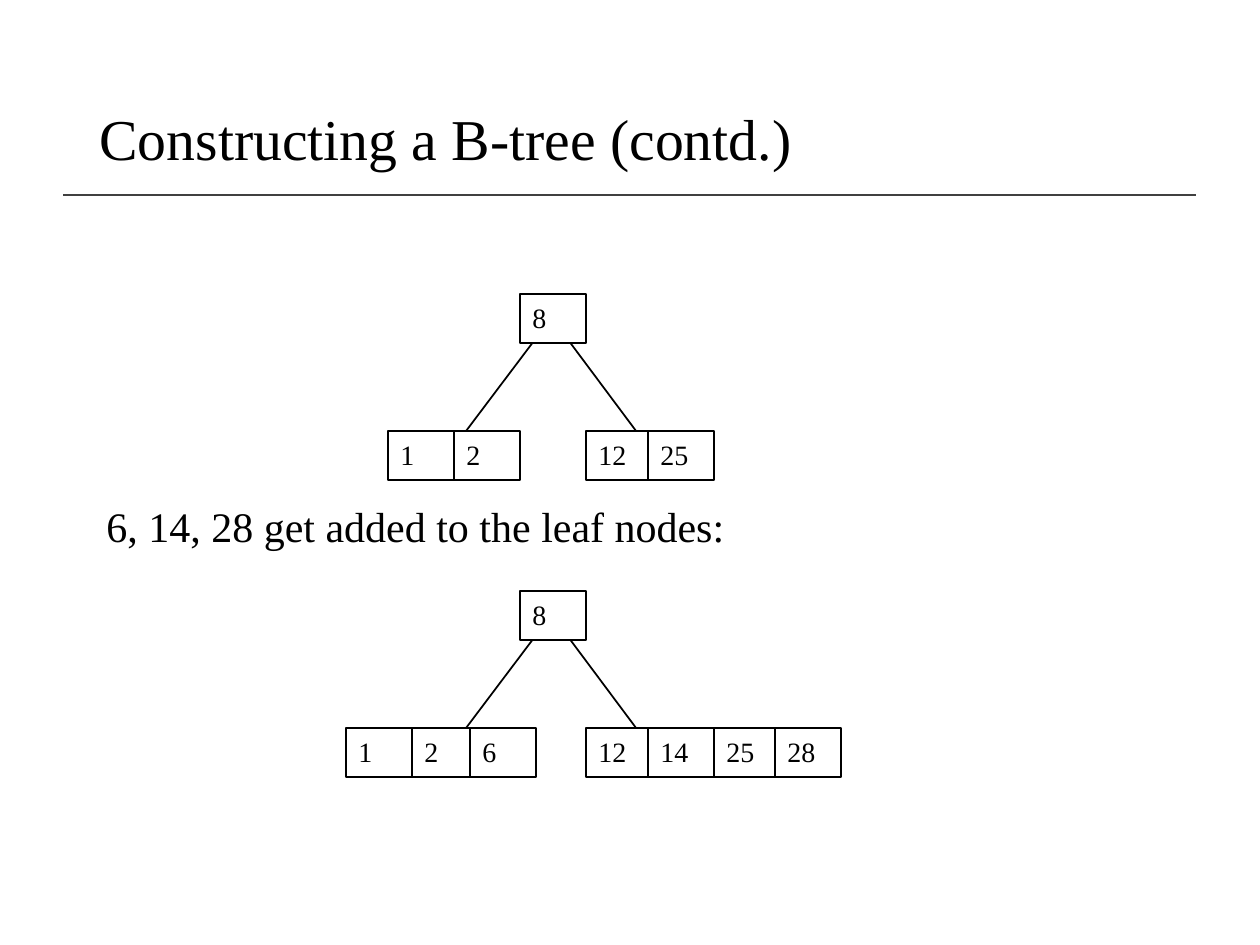
from lxml.etree import SubElement
from pptx import Presentation
from pptx.dml.color import RGBColor
from pptx.enum.shapes import MSO_CONNECTOR, MSO_SHAPE
from pptx.enum.text import MSO_ANCHOR, PP_ALIGN
from pptx.oxml.ns import qn
from pptx.util import Emu, Pt

SCALE = 914400 / 126
COLORS = {"ink": "000000", "paper": "FFFFFF", "rule": "404040"}
CELL_W, CELL_H = 66, 49
ROOT_X, LEAF_DROP = 520, 137


def px(*lengths):
    """Turn px lengths into EMU."""
    return [Emu(round(length * SCALE)) for length in lengths]


def write(shape, text, size, anchor=MSO_ANCHOR.TOP):
    frame = shape.text_frame
    frame.word_wrap = True
    frame.vertical_anchor = anchor
    paragraph = frame.paragraphs[0]
    paragraph.alignment = PP_ALIGN.LEFT
    run = paragraph.add_run()
    run.text = text
    run.font.name = "Times New Roman"
    run.font.size = Pt(size)
    run.font.color.rgb = RGBColor.from_string(COLORS["ink"])
    return paragraph


prs = Presentation()
prs.slide_width, prs.slide_height = px(1260, 945)
shapes = prs.slides.add_slide(prs.slide_layouts[6]).shapes

# Top of each tree's root, then the left edge and key of each leaf cell
trees = [
    (294, [(388, "1"), (454, "2"), (586, "12"), (648, "25")]),
    (591, [(346, "1"), (412, "2"), (470, "6"),
           (586, "12"), (648, "14"), (714, "25"), (775, "28")]),
]

# Lines go first so that the cells cover their ends
lines = [(63, 195, 1196, 195, "rule")]
for root_y, _ in trees:
    for start_x, end_x in ((546, 451), (557, 651)):
        lines.append((start_x, root_y + 31, end_x, root_y + 157, "ink"))

for *ends, color in lines:
    line = shapes.add_connector(MSO_CONNECTOR.STRAIGHT, *px(*ends))
    line.line.color.rgb = RGBColor.from_string(COLORS[color])
    line.line.width = Pt(1)
    SubElement(line._element.spPr, qn("a:effectLst"))

title = shapes.add_textbox(*px(87, 50, 1086, 183))
write(title, "Constructing a B-tree (contd.)", 33, MSO_ANCHOR.MIDDLE).line_spacing = 0.9

caption = shapes.add_textbox(*px(94, 494, 1081, 63))
write(caption, "6, 14, 28 get added to the leaf nodes:", 24)

for root_y, leaves in trees:
    cells = [(ROOT_X, root_y, "8")]
    cells += [(x, root_y + LEAF_DROP, key) for x, key in leaves]
    for x, y, key in cells:
        cell = shapes.add_shape(MSO_SHAPE.RECTANGLE, *px(x, y, CELL_W, CELL_H))
        cell.shadow.inherit = False
        cell.fill.solid()
        cell.fill.fore_color.rgb = RGBColor.from_string(COLORS["paper"])
        cell.line.color.rgb = RGBColor.from_string(COLORS["ink"])
        cell.line.width = Pt(0.75)
        write(cell, key, 16)

prs.save("out.pptx")
